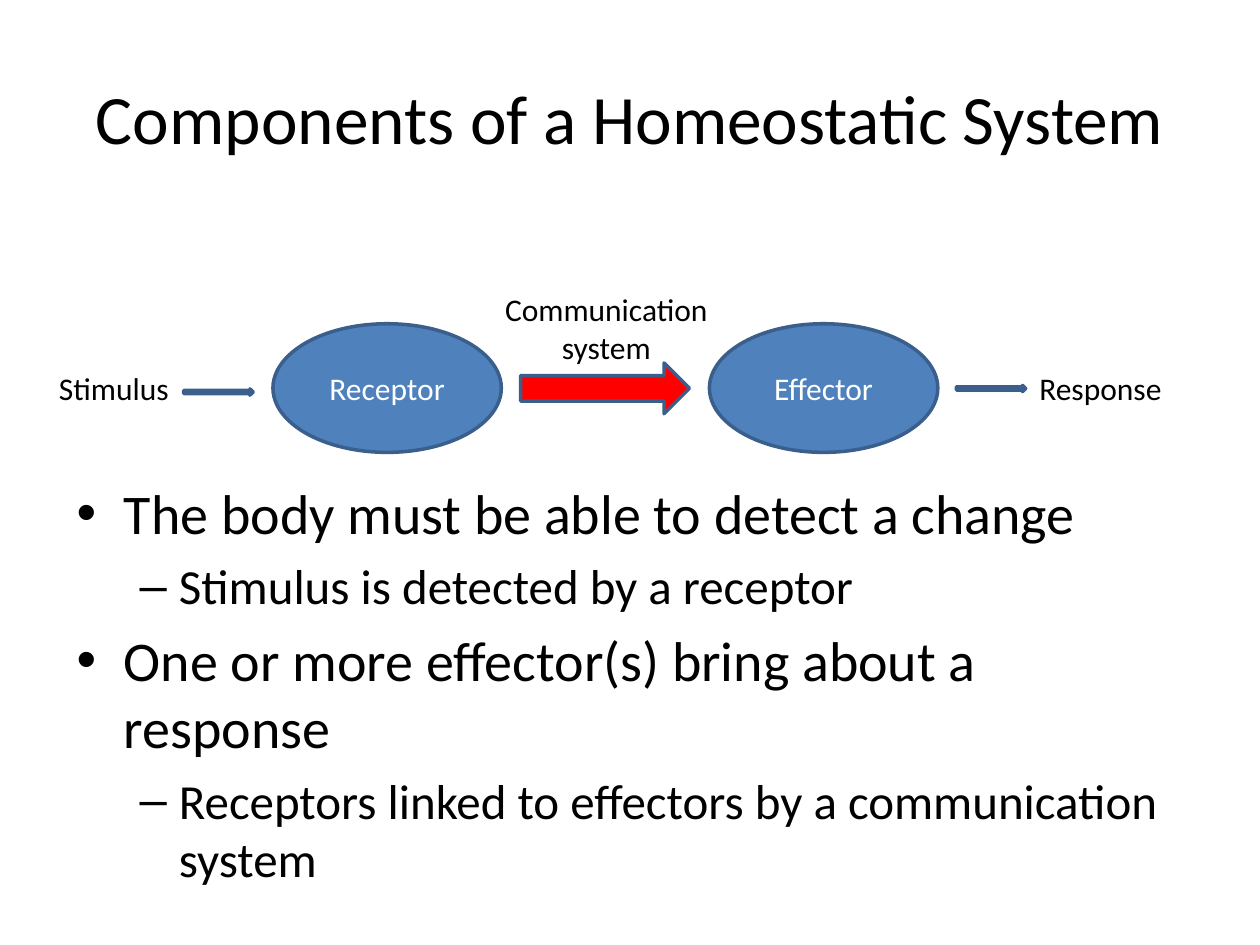
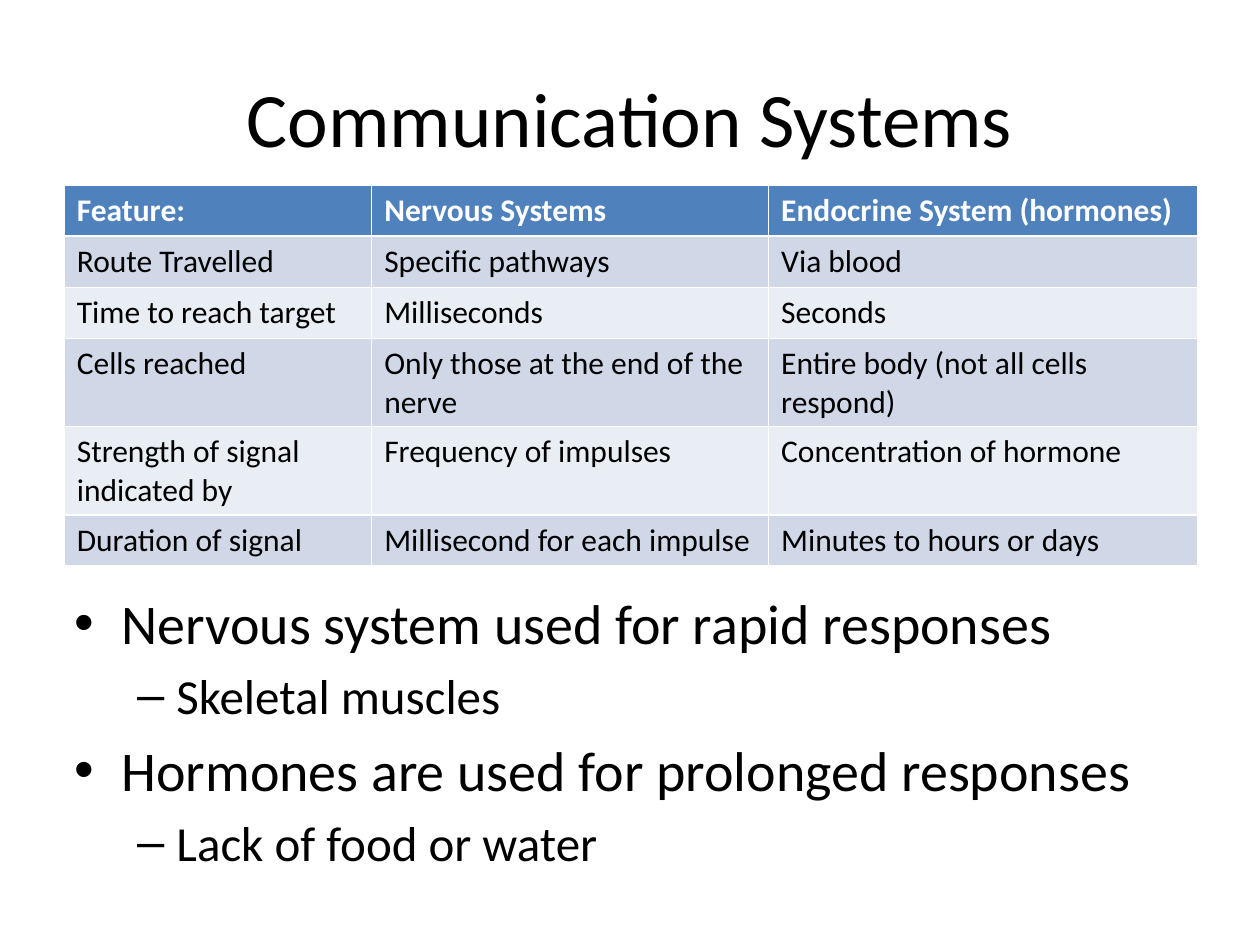
from dataclasses import dataclass
from typing import NamedTuple

from lxml import etree
from pptx import Presentation
from pptx.dml.color import RGBColor
from pptx.enum import shapes, text
from pptx.oxml import ns
from pptx.util import Pt


@dataclass(frozen=True)
class Theme:
    font: str = "Calibri"
    ink: str = "000000"
    paper: str = "FFFFFF"
    accent: str = "4F81BD"
    outline: str = "3A5F8C"
    signal: str = "FF0000"
    bands: tuple[str, str] = ("D0D8E8", "E9EDF4")
    title: float = 44
    long_title: float = 39.6
    label: float = 18
    points: tuple[float, float] = (32, 28)


class Box(NamedTuple):
    left: float
    top: float
    width: float
    height: float

    def lengths(self) -> list[Pt]:
        return [Pt(value) for value in self]


class Level(NamedTuple):
    mark: str
    indent: float
    hanging: float


class Point(NamedTuple):
    words: str
    level: int = 0


class Label(NamedTuple):
    words: str
    box: Box
    align: text.PP_ALIGN = text.PP_ALIGN.LEFT


class Part(NamedTuple):
    kind: shapes.MSO_SHAPE
    box: Box
    fill: str
    words: str = ""


THEME = Theme()
LEVELS = (Level("•", 27, 27), Level("–", 58.5, 22.5))
TITLE_BOX = Box(36, 21.6, 648, 90)

ORGAN_TOP, ORGAN_WIDTH, ORGAN_HEIGHT = 185, 130.5, 73.5
LABEL_TOP, LABEL_HEIGHT = 207.4, 29
PARTS = (
    Part(shapes.MSO_SHAPE.OVAL, Box(156, ORGAN_TOP, ORGAN_WIDTH, ORGAN_HEIGHT), THEME.accent, "Receptor"),
    Part(shapes.MSO_SHAPE.OVAL, Box(405.4, ORGAN_TOP, ORGAN_WIDTH, ORGAN_HEIGHT), THEME.accent, "Effector"),
    Part(shapes.MSO_SHAPE.RIGHT_ARROW, Box(105, 222.2, 39.6, 3.6), THEME.accent),
    Part(shapes.MSO_SHAPE.RIGHT_ARROW, Box(546.5, 220.2, 39.6, 3.6), THEME.accent),
    Part(shapes.MSO_SHAPE.RIGHT_ARROW, Box(297.5, LABEL_TOP, 96.5, LABEL_HEIGHT), THEME.signal),
)
LABELS = (
    Label("Stimulus", Box(26.6, LABEL_TOP, 77.8, LABEL_HEIGHT)),
    Label("Response", Box(586.8, LABEL_TOP, 85, LABEL_HEIGHT)),
    Label("Communication\nsystem", Box(280.6, 162, 131.8, 51), text.PP_ALIGN.CENTER),
)
COMPONENT_POINTS = (
    Point("The body must be able to detect a change"),
    Point("Stimulus is detected by a receptor", 1),
    Point("One or more effector(s) bring about a response"),
    Point("Receptors linked to effectors by a communication system", 1),
)
FEATURE_COLUMNS = (175.7, 226.8, 245.5)
FEATURE_ROW_HEIGHT = 29.2
FEATURES = (
    ("Feature:", "Nervous Systems", "Endocrine System (hormones)"),
    ("Route Travelled", "Specific pathways", "Via blood"),
    ("Time to reach target", "Milliseconds", "Seconds"),
    ("Cells reached", "Only those at the end of the nerve", "Entire body (not all cells respond)"),
    ("Strength of signal indicated by", "Frequency of impulses", "Concentration of hormone"),
    ("Duration of signal", "Millisecond for each impulse", "Minutes to hours or days"),
)
SYSTEM_POINTS = (
    Point("Nervous system used for rapid responses"),
    Point("Skeletal muscles", 1),
    Point("Hormones are used for prolonged responses"),
    Point("Lack of food or water", 1),
)


def write(paragraph, words: str, *, size: float, color: str = THEME.ink,
          bold: bool = False, align: text.PP_ALIGN = text.PP_ALIGN.LEFT) -> None:
    paragraph.alignment = align
    run = paragraph.add_run()
    run.text = words
    run.font.name = THEME.font
    run.font.size = Pt(size)
    run.font.bold = bold
    run.font.color.rgb = RGBColor.from_string(color)


def next_paragraph(frame, index: int):
    return frame.add_paragraph() if index else frame.paragraphs[0]


def add_frame(slide, box: Box, *, wrap: bool = True):
    frame = slide.shapes.add_textbox(*box.lengths()).text_frame
    frame.word_wrap = wrap
    return frame


def add_title(slide, words: str, size: float = THEME.title) -> None:
    frame = add_frame(slide, TITLE_BOX)
    frame.vertical_anchor = text.MSO_ANCHOR.MIDDLE
    write(frame.paragraphs[0], words, size=size, align=text.PP_ALIGN.CENTER)


def add_label(slide, label: Label) -> None:
    frame = add_frame(slide, label.box, wrap=False)
    frame.auto_size = text.MSO_AUTO_SIZE.SHAPE_TO_FIT_TEXT
    for index, line in enumerate(label.words.split("\n")):
        write(next_paragraph(frame, index), line, size=THEME.label, align=label.align)


def add_part(slide, part: Part) -> None:
    shape = slide.shapes.add_shape(part.kind, *part.box.lengths())
    shape.shadow.inherit = False
    shape.fill.solid()
    shape.fill.fore_color.rgb = RGBColor.from_string(part.fill)
    shape.line.color.rgb = RGBColor.from_string(THEME.outline)
    shape.line.width = Pt(2)
    if part.words:
        shape.text_frame.vertical_anchor = text.MSO_ANCHOR.MIDDLE
        write(shape.text_frame.paragraphs[0], part.words, size=THEME.label,
              color=THEME.paper, align=text.PP_ALIGN.CENTER)


def add_bullet(paragraph, level: Level) -> None:
    properties = paragraph._p.get_or_add_pPr()
    properties.set("marL", str(Pt(level.indent)))
    properties.set("indent", str(-Pt(level.hanging)))
    etree.SubElement(properties, ns.qn("a:buFont")).set("typeface", "Arial")
    etree.SubElement(properties, ns.qn("a:buChar")).set("char", level.mark)


def add_points(slide, box: Box, points: tuple[Point, ...]) -> None:
    frame = add_frame(slide, box)
    for index, point in enumerate(points):
        paragraph = next_paragraph(frame, index)
        size = THEME.points[point.level]
        paragraph.level = point.level
        paragraph.space_before = Pt(size * 0.2)
        add_bullet(paragraph, LEVELS[point.level])
        write(paragraph, point.words, size=size)


def add_features(slide, left: float, top: float) -> None:
    box = Box(left, top, sum(FEATURE_COLUMNS), FEATURE_ROW_HEIGHT * len(FEATURES))
    table = slide.shapes.add_table(len(FEATURES), len(FEATURE_COLUMNS), *box.lengths()).table
    for column, width in zip(table.columns, FEATURE_COLUMNS):
        column.width = Pt(width)
    for row, feature in enumerate(FEATURES):
        heading = row == 0
        fill = THEME.accent if heading else THEME.bands[(row - 1) % 2]
        for column, words in enumerate(feature):
            cell = table.cell(row, column)
            cell.fill.solid()
            cell.fill.fore_color.rgb = RGBColor.from_string(fill)
            write(cell.text_frame.paragraphs[0], words, size=THEME.label,
                  color=THEME.paper if heading else THEME.ink, bold=heading)


def build_components(slide) -> None:
    add_title(slide, "Components of a Homeostatic System", THEME.long_title)
    for part in PARTS:
        add_part(slide, part)
    for label in LABELS:
        add_label(slide, label)
    add_points(slide, Box(36.7, 270, 648, 232.6), COMPONENT_POINTS)


def build_systems(slide) -> None:
    add_title(slide, "Communication Systems")
    add_features(slide, 36.7, 105.8)
    add_points(slide, Box(35.3, 332.6, 648, 232.6), SYSTEM_POINTS)


def main() -> None:
    deck = Presentation()
    deck.slide_width, deck.slide_height = Pt(720), Pt(540)
    blank = deck.slide_layouts[6]
    for build in (build_components, build_systems):
        build(deck.slides.add_slide(blank))
    deck.save("out.pptx")


if __name__ == "__main__":
    main()
